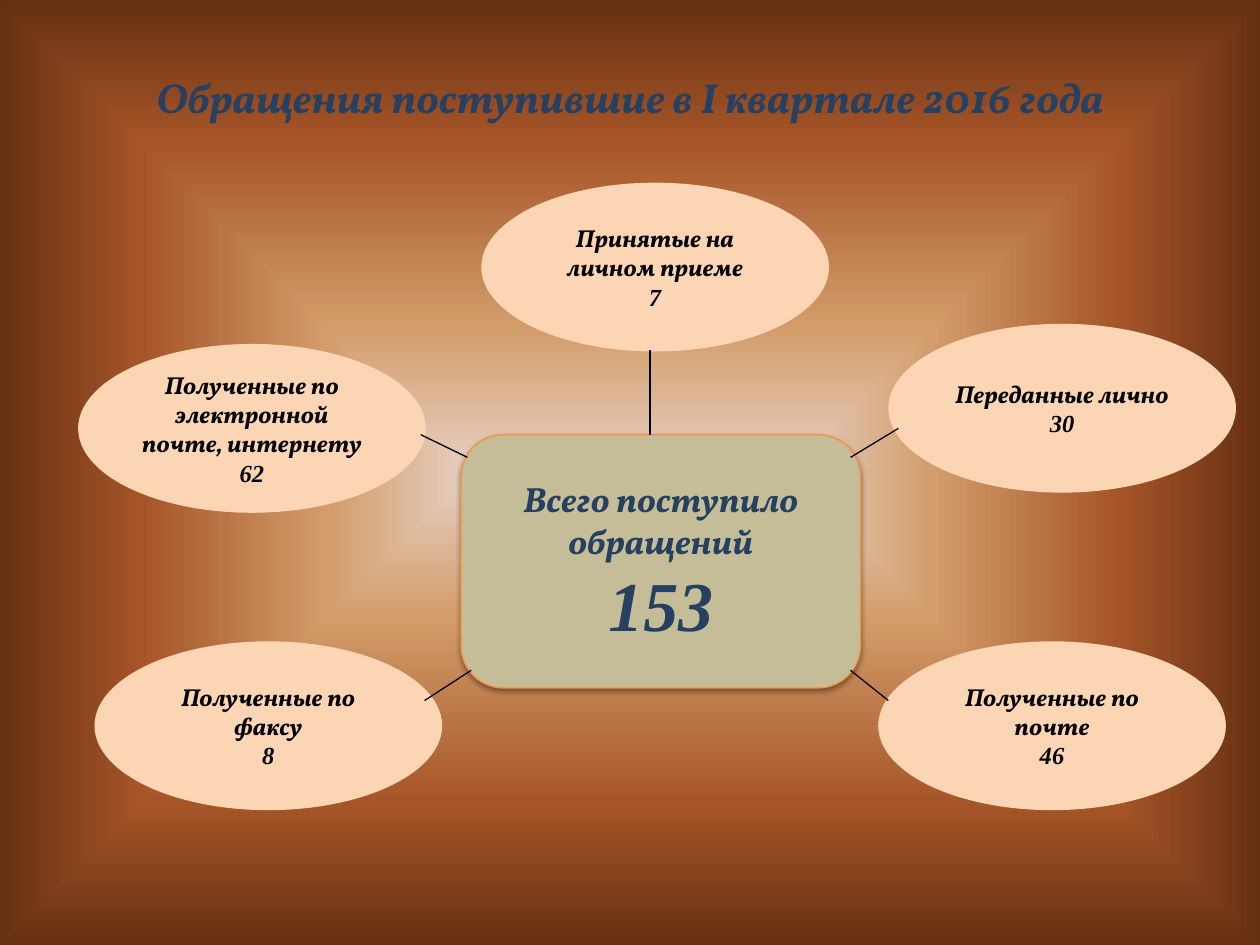
"""Build a slide showing how citizens' appeals arrived in the first quarter."""
from dataclasses import dataclass

from lxml.etree import SubElement
from pptx import Presentation
from pptx.dml.color import RGBColor
from pptx.enum.shapes import MSO_CONNECTOR as Conn, MSO_SHAPE as Geo
from pptx.enum.text import MSO_ANCHOR as Anchor, PP_ALIGN as Align
from pptx.oxml import parse_xml
from pptx.oxml.ns import nsdecls, qn
from pptx.shapes.autoshape import Shape
from pptx.slide import Slide
from pptx.text.text import TextFrame
from pptx.util import Inches, Pt


@dataclass(frozen=True)
class Theme:
    ink: str = "254061"
    black: str = "000000"
    bubble: str = "FCD5B5"
    hub: str = "C4BD97"
    hub_line: str = "F69240"
    backdrop: tuple[tuple[int, str], ...] = (
        (0, "E6D0C4"), (30, "D49E6C"), (70, "A65528"), (100, "663012"))
    text_font: str = "Vollkorn"
    number_font: str = "Times New Roman"
    title_size: int = 24
    hub_size: int = 20
    total_size: int = 40
    bubble_size: int = 14
    line_width: float = 0.75


@dataclass(frozen=True)
class Channel:
    label: str
    count: int
    left: float
    top: float
    spoke: tuple[float, float, float, float]


THEME = Theme()
BUBBLE_SIZE = (2.76, 1.34)
CHANNELS = (
    Channel("Принятые на личном приеме", 7, 3.82, 1.45, (5.16, 2.78, 5.16, 3.45)),
    Channel("Переданные лично", 30, 7.05, 2.57, (6.75, 3.63, 7.13, 3.4)),
    Channel("Полученные по почте", 46, 6.97, 5.09, (6.75, 5.32, 7.05, 5.56)),
    Channel("Полученные по факсу", 8, 0.75, 5.09, (3.37, 5.56, 3.74, 5.32)),
    Channel("Полученные по электронной почте, интернету", 62, 0.62, 2.73,
            (3.34, 3.45, 3.71, 3.63)),
)


def rgb(code: str) -> RGBColor:
    return RGBColor.from_string(code)


def write(tf: TextFrame, text: str, sizes: tuple[int, ...], color: str) -> None:
    """Set centred bold italic lines, the second of which is a number."""
    tf.text = text
    tf.word_wrap = True
    tf.vertical_anchor = Anchor.MIDDLE
    for p, size, font in zip(tf.paragraphs, sizes, (THEME.text_font, THEME.number_font)):
        p.alignment = Align.CENTER
        for r in p.runs:
            r.font.name, r.font.size = font, Pt(size)
            r.font.bold = r.font.italic = True
            r.font.color.rgb = rgb(color)


def paint_background(s: Slide) -> None:
    """Fill the background with a gradient that runs from the centre outwards."""
    s.background.fill.gradient()
    grad = s.element.find(".//" + qn("a:gradFill"))
    stops = "".join(f'<a:gs pos="{pos * 1000}"><a:srgbClr val="{color}"/></a:gs>'
                    for pos, color in THEME.backdrop)
    grad.getparent().replace(grad, parse_xml(
        f'<a:gradFill {nsdecls("a")} rotWithShape="1"><a:gsLst>{stops}</a:gsLst>'
        '<a:path path="shape"><a:fillToRect l="50000" t="50000" r="50000" b="50000"/>'
        '</a:path></a:gradFill>'))


def add_title(s: Slide, text: str) -> None:
    sp = s.shapes.title
    sp.left, sp.top, sp.width, sp.height = map(Inches, (0.5, 0.3, 9, 0.93))
    write(sp.text_frame, text, (THEME.title_size,), THEME.ink)


def add_block(s: Slide, geo: Geo, box: tuple[float, ...], color: str) -> Shape:
    sp = s.shapes.add_shape(geo, *map(Inches, box))
    sp.shadow.inherit = False
    sp.fill.solid()
    sp.fill.fore_color.rgb = rgb(color)
    sp.line.fill.background()
    return sp


def add_hub(s: Slide, label: str, total: int) -> None:
    """Add the central box with the total, its outline and a soft shadow."""
    sp = add_block(s, Geo.ROUNDED_RECTANGLE, (3.66, 3.45, 3.17, 2.01), THEME.hub)
    sp.line.color.rgb = rgb(THEME.hub_line)
    sp.line.width = Pt(THEME.line_width)
    effects = sp.element.spPr.find(qn("a:effectLst"))
    effects.append(parse_xml(
        f'<a:outerShdw {nsdecls("a")} blurRad="{Pt(3.1)}" dist="{Pt(1.6)}" dir="5400000"'
        f' rotWithShape="0"><a:srgbClr val="{THEME.black}"><a:alpha val="38000"/>'
        '</a:srgbClr></a:outerShdw>'))
    write(sp.text_frame, f"{label}\n{total}", (THEME.hub_size, THEME.total_size), THEME.ink)


def add_bubble(s: Slide, channel: Channel) -> None:
    sp = add_block(s, Geo.OVAL, (channel.left, channel.top, *BUBBLE_SIZE), THEME.bubble)
    write(sp.text_frame, f"{channel.label}\n{channel.count}",
          (THEME.bubble_size,) * 2, THEME.black)


def add_spoke(s: Slide, channel: Channel) -> None:
    line = s.shapes.add_connector(Conn.STRAIGHT, *map(Inches, channel.spoke))
    line.line.color.rgb = rgb(THEME.black)
    line.line.width = Pt(THEME.line_width)
    SubElement(line.element.spPr, qn("a:effectLst"))


def main() -> None:
    prs = Presentation()
    prs.slide_width, prs.slide_height = Inches(10), Inches(7.5)
    s = prs.slides.add_slide(prs.slide_layouts[5])
    paint_background(s)
    add_title(s, "Обращения поступившие в I квартале 2016 года")
    add_hub(s, "Всего поступило обращений", sum(c.count for c in CHANNELS))
    for channel in CHANNELS:
        add_bubble(s, channel)
    for channel in CHANNELS:
        add_spoke(s, channel)
    prs.save("out.pptx")


if __name__ == "__main__":
    main()
